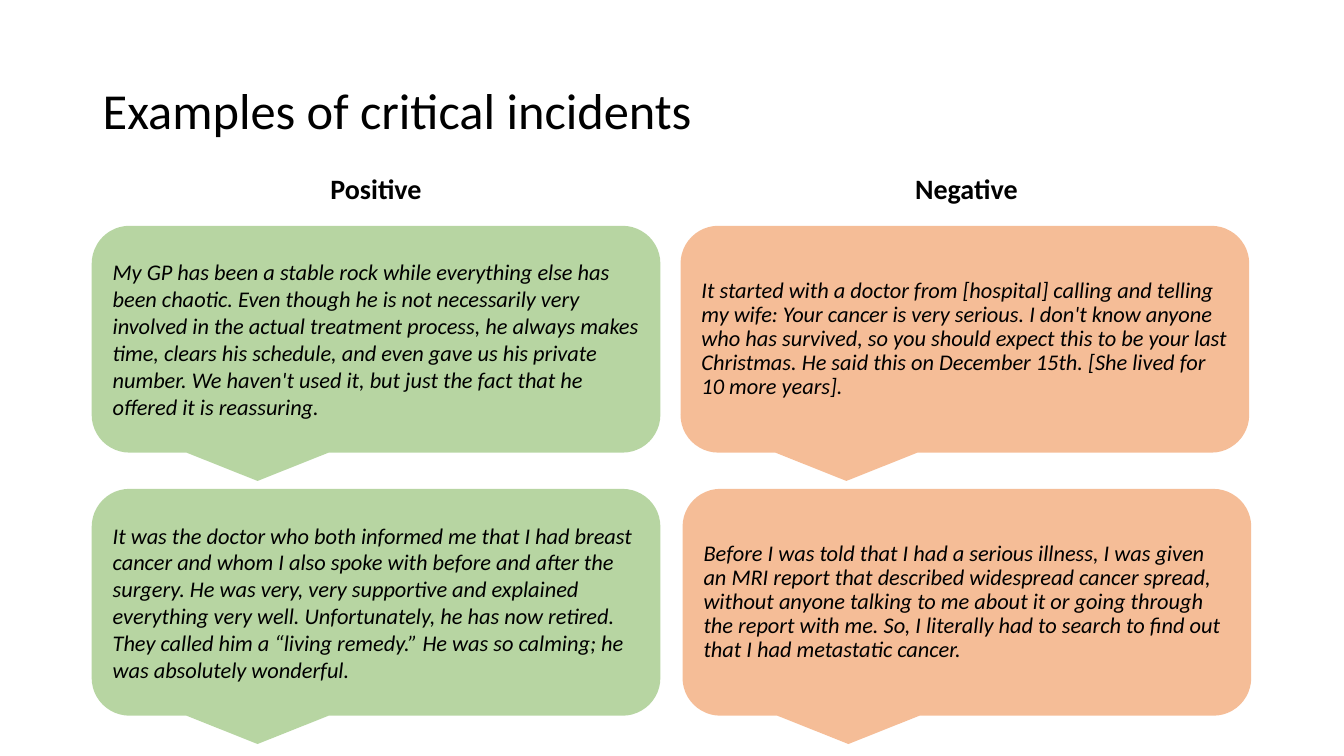
from dataclasses import dataclass

from lxml import etree
from pptx import Presentation
from pptx.dml.color import RGBColor
from pptx.enum import shapes, text
from pptx.oxml.ns import qn
from pptx.util import Inches, Pt

COLORS = {"text": "000000", "positive": "70AD47", "negative": "ED7D31"}
FONT = "Calibri"
BUBBLE_W, BUBBLE_H = 5.64, 2.25
ROW_TOPS = (2.24, 4.85)


@dataclass
class Label:
    text: str
    left: float
    top: float
    width: float
    height: float
    size: int
    bold: bool = False
    align: text.PP_ALIGN = text.PP_ALIGN.LEFT
    anchor: text.MSO_ANCHOR = text.MSO_ANCHOR.MIDDLE
    space_before: int = 0


@dataclass
class Column:
    color: str
    lefts: tuple[float, float]
    quotes: tuple[str, str]
    line_spacing: float
    space_before: int


LABELS = [
    Label("Examples of critical incidents", 0.92, 0.4, 11.5, 1.45, 36),
    Label("Positive", 0.91, 1.19, 5.64, 0.9, 20, True,
          text.PP_ALIGN.CENTER, text.MSO_ANCHOR.BOTTOM, 10),
    Label("Negative", 6.75, 1.19, 5.67, 0.9, 20, True,
          text.PP_ALIGN.CENTER, text.MSO_ANCHOR.BOTTOM, 10),
]

COLUMNS = [
    Column("positive", (0.91, 0.91), (
        "My GP has been a stable rock while everything else has been chaotic. "
        "Even though he is not necessarily very involved in the actual treatment "
        "process, he always makes time, clears his schedule, and even gave us his "
        "private number. We haven't used it, but just the fact that he offered it "
        "is reassuring.",
        "It was the doctor who both informed me that I had breast cancer and whom "
        "I also spoke with before and after the surgery. He was very, very "
        "supportive and explained everything very well. Unfortunately, he has now "
        "retired. They called him a “living remedy.” He was so calming; he was "
        "absolutely wonderful.",
    ), 1.0, 0),
    Column("negative", (6.75, 6.77), (
        "It started with a doctor from [hospital] calling and telling my wife: "
        "Your cancer is very serious. I don't know anyone who has survived, so you "
        "should expect this to be your last Christmas. He said this on December "
        "15th. [She lived for 10 more years].",
        "Before I was told that I had a serious illness, I was given an MRI report "
        "that described widespread cancer spread, without anyone talking to me "
        "about it or going through the report with me. So, I literally had to "
        "search to find out that I had metastatic cancer.",
    ), 0.9, 10),
]


def write(sp, content: str, size: int, align, anchor,
          line_spacing: float, space_before: int,
          bold: bool = False, italic: bool = False) -> None:
    tf = sp.text_frame
    tf.word_wrap = True
    tf.vertical_anchor = anchor
    p = tf.paragraphs[0]
    p.text = content
    p.alignment = align
    p.line_spacing = line_spacing
    p.space_before = Pt(space_before)
    p.font.name = FONT
    p.font.size = Pt(size)
    p.font.bold = bold
    p.font.italic = italic
    p.font.color.rgb = RGBColor.from_string(COLORS["text"])


def add_label(s, label: Label) -> None:
    sp = s.shapes.add_textbox(Inches(label.left), Inches(label.top),
                              Inches(label.width), Inches(label.height))
    write(sp, label.text, label.size, label.align, label.anchor,
          0.9, label.space_before, bold=label.bold)


def add_bubble(s, column: Column, left: float, top: float, quote: str) -> None:
    sp = s.shapes.add_shape(shapes.MSO_SHAPE.ROUNDED_RECTANGULAR_CALLOUT,
                            Inches(left), Inches(top),
                            Inches(BUBBLE_W), Inches(BUBBLE_H))
    sp.shadow.inherit = False
    sp.line.fill.background()
    sp.fill.solid()
    sp.fill.fore_color.rgb = RGBColor.from_string(COLORS[column.color])
    color = sp._element.spPr.find(qn("a:solidFill"))[0]
    etree.SubElement(color, qn("a:alpha"), val="50000")
    write(sp, quote, 16, text.PP_ALIGN.LEFT, text.MSO_ANCHOR.MIDDLE,
          column.line_spacing, column.space_before, italic=True)


def main() -> None:
    prs = Presentation()
    prs.slide_width = Inches(13.33)
    prs.slide_height = Inches(7.5)
    s = prs.slides.add_slide(prs.slide_layouts[6])
    for label in LABELS:
        add_label(s, label)
    for column in COLUMNS:
        for left, top, quote in zip(column.lefts, ROW_TOPS, column.quotes):
            add_bubble(s, column, left, top, quote)
    prs.save("out.pptx")


if __name__ == "__main__":
    main()
